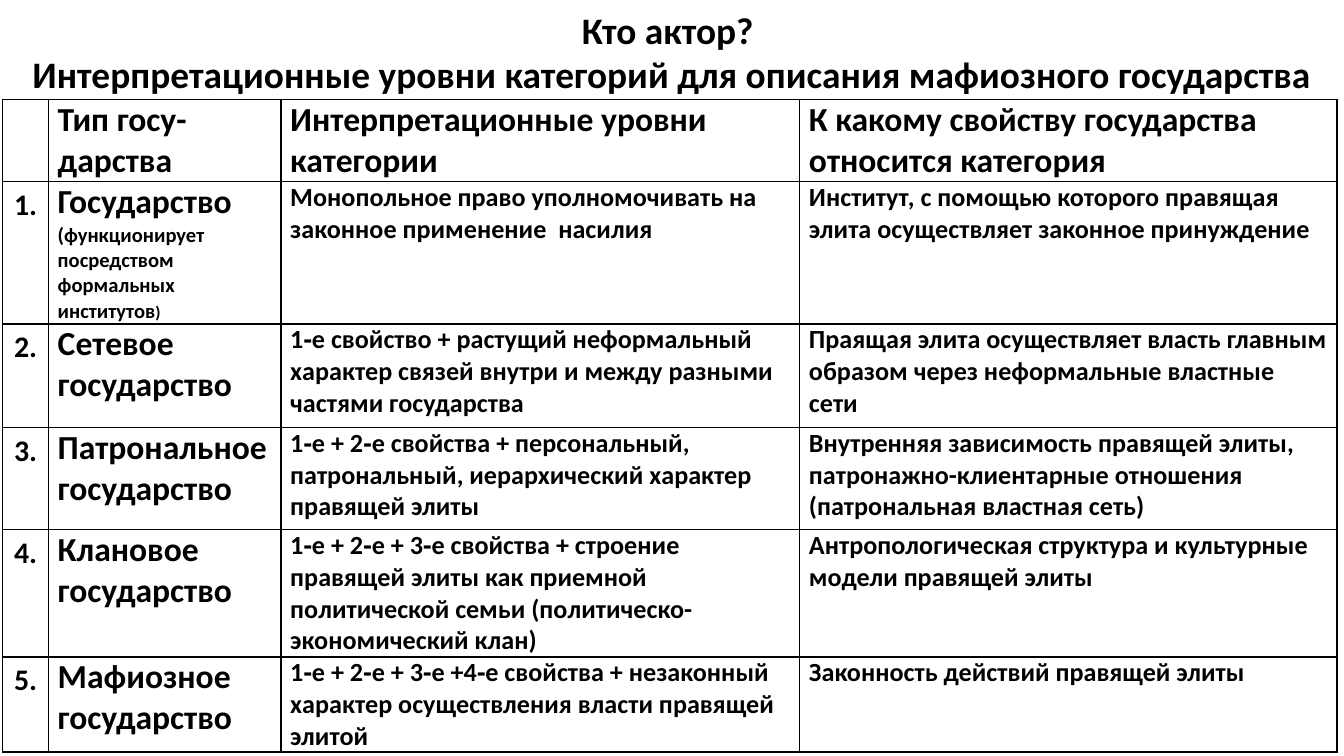
"""Build a slide with a table of the levels used to describe a mafia state."""
import lxml.etree
import pptx
import pptx.dml.color
import pptx.enum.text
import pptx.oxml.ns
import pptx.util

Inches = pptx.util.Inches
BLACK = pptx.dml.color.RGBColor(0, 0, 0)
CENTER = pptx.enum.text.PP_ALIGN.CENTER
TOP = pptx.enum.text.MSO_ANCHOR.TOP
qn = pptx.oxml.ns.qn


def write(para, text, size=14, align=None, space=None):
    run = para.add_run()
    run.text = text
    run.font.name = "Calibri"
    run.font.size = pptx.util.Pt(size)
    run.font.bold = True
    run.font.color.rgb = BLACK
    if align is not None:
        para.alignment = align
    if space is not None:
        para.line_spacing = space


def frame_cell(cell):
    props = cell._tc.get_or_add_tcPr()
    for side in ("lnL", "lnR", "lnT", "lnB"):
        line = lxml.etree.SubElement(props, qn("a:" + side), w=str(pptx.util.Pt(1)))
        fill = lxml.etree.SubElement(line, qn("a:solidFill"))
        lxml.etree.SubElement(fill, qn("a:srgbClr"), val=str(BLACK))
    cell.fill.background()
    cell.margin_left = cell.margin_right = Inches(0.07)
    cell.margin_top = cell.margin_bottom = 0


deck = pptx.Presentation()
deck.slide_width = Inches(10)
deck.slide_height = Inches(10 * 9 / 16)
slide = deck.slides.add_slide(deck.slide_layouts[5])

title = slide.shapes.title
title.left, title.top = Inches(0), Inches(0)
title.width, title.height = Inches(10), Inches(0.84)
frame = title.text_frame
frame.word_wrap = True
frame.auto_size = pptx.enum.text.MSO_AUTO_SIZE.NONE
frame.vertical_anchor = TOP
write(frame.paragraphs[0], "Кто актор? ", size=20, align=CENTER)
write(frame.add_paragraph(),
      "Интерпретационные уровни категорий для описания мафиозного государства",
      size=20, align=CENTER)

HEADS = ["Тип госу-дарства", "Интерпретационные уровни категории",
         "К какому свойству государства относится категория"]
STATES = [
    ([("Государство ", 18),
      ("(функционирует посредством формальных институтов", 11), (")", 9)],
     "Moнопольное право уполномочивать на законное применение  насилия",
     "Институт, с помощью которого правящая элита осуществляет законное принуждение"),
    ([("Сeтевое государство", 18)],
     "1‐е свойство + растущий неформальный характер связей внутри и между разными "
     "частями государства",
     "Праящая элита осуществляет власть главным образом через неформальные "
     "властные сети"),
    ([("Патрональное государство", 18)],
     "1‐е + 2‐е свойства + персональный, патрональный, иерархический характер "
     "правящей элиты",
     "Внутренняя зависимость правящей элиты, пaтронажно-клиентарные отношения "
     "(патрональная властная сеть)"),
    ([("Клановое государство", 18)],
     "1‐е + 2‐е + 3‐е свойства + строение правящей элиты как приемной политической "
     "семьи (политическо-экономический клан)",
     "Антропологическая структура и культурные модели правящей элиты"),
    ([("Maфиозное государство", 18)],
     "1‐е + 2‐е + 3‐е +4‐е свойства + незаконный характер осуществления власти "
     "правящей элитой",
     "Законность действий правящей элиты"),
]
WIDTHS = [0.34, 1.73, 3.86, 4]
HEIGHTS = [0.59, 0.59, 0.77, 0.76, 0.89, 0.68]

grid = slide.shapes.add_table(
    len(HEIGHTS), len(WIDTHS), Inches(0.02), Inches(0.74),
    Inches(sum(WIDTHS)), Inches(sum(HEIGHTS))).table
for col, width in zip(grid.columns, WIDTHS):
    col.width = Inches(width)
for row, height in zip(grid.rows, HEIGHTS):
    row.height = Inches(height)
for cell in grid.iter_cells():
    frame_cell(cell)

for col, head in enumerate(HEADS, 1):
    write(grid.cell(0, col).text_frame.paragraphs[0], head, size=18)

for row, (names, level, trait) in enumerate(STATES, 1):
    paras = [grid.cell(row, col).text_frame.paragraphs[0] for col in range(4)]
    write(paras[0], f"{row}.", size=16, align=CENTER, space=1.15)
    for text, size in names:
        write(paras[1], text, size=size)
    write(paras[2], level)
    write(paras[3], trait)

deck.save("out.pptx")
